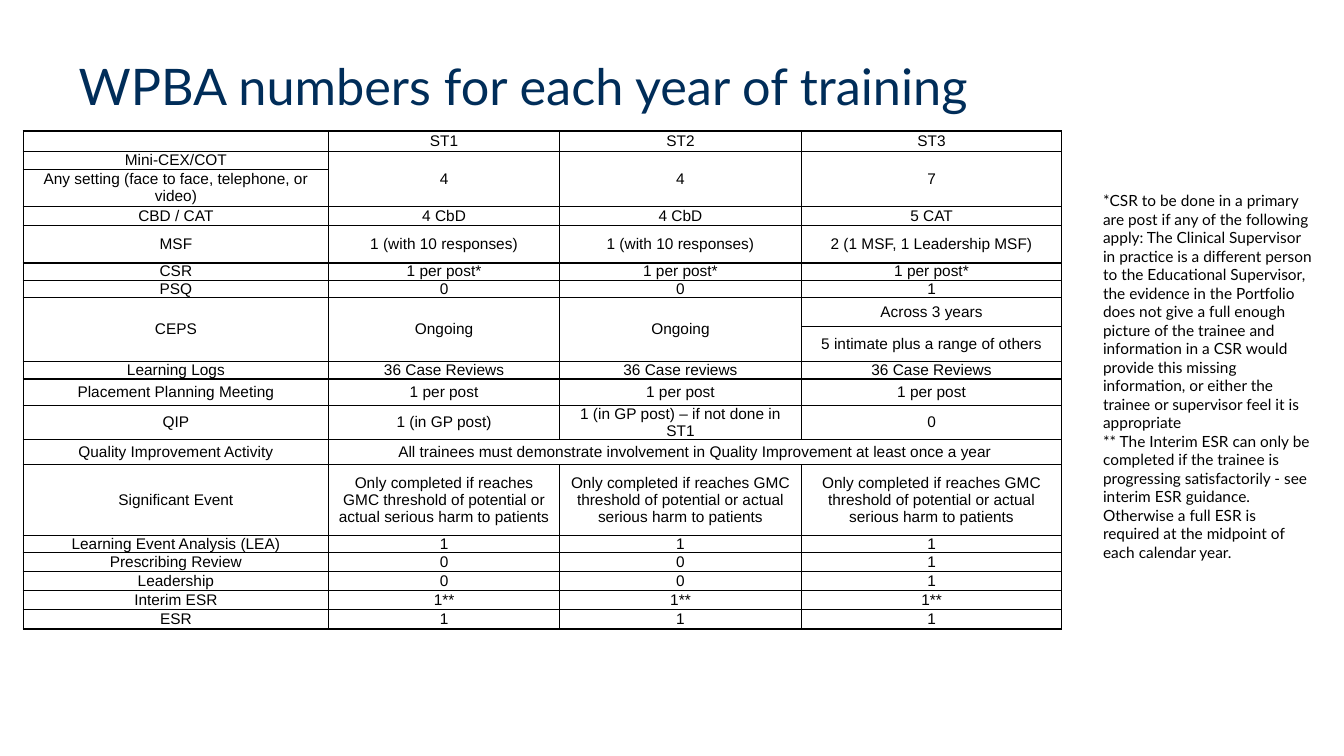
import pptx
import pptx.dml.color
import pptx.enum.text
import pptx.oxml
import pptx.oxml.ns
import pptx.util
from pptx.util import Inches

BLACK = "000000"
NAVY = "002D59"
HARM = "Only completed if reaches GMC threshold of potential or actual serious harm to patients"
COLUMNS = [3.03, 2.29, 2.4, 2.58]
ROWS = [
    (0.2, ["", "ST1", "ST2", "ST3"]),
    (0.18, ["Mini-CEX/COT", "4", "4", "7"]),
    (0.37, ["Any setting (face to face, telephone, or video)", "", "", ""]),
    (0.19, ["CBD / CAT", "4 CbD", "4 CbD", "5 CAT"]),
    (0.37, ["MSF", "1 (with 10 responses)", "1 (with 10 responses)", "2 (1 MSF, 1 Leadership MSF)"]),
    (0.17, ["CSR", "1 per post*", "1 per post*", "1 per post*"]),
    (0.17, ["PSQ", "0", "0", "1"]),
    (0.29, ["CEPS", "Ongoing", "Ongoing", "Across 3 years"]),
    (0.35, ["", "", "", "5 intimate plus a range of others"]),
    (0.17, ["Learning Logs", "36 Case Reviews", "36 Case reviews", "36 Case Reviews"]),
    (0.26, ["Placement Planning Meeting", "1 per post", "1 per post", "1 per post"]),
    (0.34, ["QIP", "1 (in GP post)", "1 (in GP post) – if not done in ST1", "0"]),
    (0.25, ["Quality Improvement Activity",
            "All trainees must demonstrate involvement in Quality Improvement at least once a year", "", ""]),
    (0.7, ["Significant Event", HARM, HARM, HARM]),
    (0.17, ["Learning Event Analysis (LEA)", "1", "1", "1"]),
    (0.19, ["Prescribing Review", "0", "0", "1"]),
    (0.19, ["Leadership", "0", "0", "1"]),
    (0.19, ["Interim ESR", "1**", "1**", "1**"]),
    (0.19, ["ESR", "1", "1", "1"]),
]
MERGES = [((1, c), (2, c)) for c in (1, 2, 3)] + [((7, c), (8, c)) for c in (0, 1, 2)] + [((12, 1), (12, 3))]
NOTES = [
    "*CSR to be done in a primary are post if any of the following apply: The Clinical Supervisor in practice "
    "is a different person to the Educational Supervisor, the evidence in the Portfolio does not give a full "
    "enough picture of the trainee and information in a CSR would provide this missing information, or either "
    "the trainee or supervisor feel it is appropriate",
    "** The Interim ESR can only be completed if the trainee is progressing satisfactorily - see interim ESR "
    "guidance. Otherwise a full ESR is required at the midpoint of each calendar year.",
]


def rgb(value):
    """Turn a hex string into a colour."""
    return pptx.dml.color.RGBColor.from_string(value)


def format_runs(tf, name, size, color):
    """Give every run of a text frame its font."""
    for p in tf.paragraphs:
        for r in p.runs:
            r.font.name = name
            r.font.size = pptx.util.Pt(size)
            r.font.color.rgb = rgb(color)


def set_frame(tf):
    """Set the margins and flow of a text box."""
    tf.margin_left = tf.margin_right = tf.margin_top = tf.margin_bottom = Inches(0.05)
    tf.word_wrap = True
    tf.auto_size = pptx.enum.text.MSO_AUTO_SIZE.NONE
    tf.vertical_anchor = pptx.enum.text.MSO_ANCHOR.TOP


def add_title(s, left, top, width, height):
    """Place the slide title in its box."""
    sp = s.shapes.title
    sp.left, sp.top, sp.width, sp.height = (Inches(v) for v in (left, top, width, height))
    tf = sp.text_frame
    tf.text = "WPBA numbers for each year of training"
    tf.paragraphs[0].alignment = pptx.enum.text.PP_ALIGN.LEFT
    set_frame(tf)
    format_runs(tf, "Lato", 36, NAVY)


def format_cell(cell, text):
    """Fill one table cell with centred text and thin borders."""
    cell.margin_left = cell.margin_right = Inches(0.07)
    cell.margin_top = cell.margin_bottom = 0
    cell.vertical_anchor = pptx.enum.text.MSO_ANCHOR.MIDDLE
    tf = cell.text_frame
    tf.text = text
    p = tf.paragraphs[0]
    p.alignment = pptx.enum.text.PP_ALIGN.CENTER
    format_runs(tf, "Arial", 11, BLACK)
    ns = pptx.oxml.ns.nsdecls("a")
    if not text:
        p._p.append(pptx.oxml.parse_xml(f'<a:endParaRPr {ns} sz="1100"><a:latin typeface="Arial"/></a:endParaRPr>'))
    tc_pr = cell._tc.get_or_add_tcPr()
    for side in ("lnL", "lnR", "lnT", "lnB"):
        tc_pr.append(pptx.oxml.parse_xml(
            f'<a:{side} {ns} w="12700"><a:solidFill><a:srgbClr val="{BLACK}"/></a:solidFill></a:{side}>'))
    cell.fill.background()


def add_assessments(s, left, top):
    """Place the table of assessments for each training year."""
    heights = [height for height, _ in ROWS]
    frame = s.shapes.add_table(len(ROWS), len(COLUMNS), Inches(left), Inches(top),
                               Inches(sum(COLUMNS)), Inches(sum(heights)))
    table = frame.table
    table.first_row = table.horz_banding = False
    for column, width in zip(table.columns, COLUMNS):
        column.width = Inches(width)
    for row, (height, texts) in zip(table.rows, ROWS):
        row.height = Inches(height)
        for cell, text in zip(row.cells, texts):
            format_cell(cell, text)
    for first, last in MERGES:
        table.cell(*first).merge(table.cell(*last))


def add_notes(s, left, top, width, height):
    """Place the footnotes beside the table."""
    sp = s.shapes.add_textbox(Inches(left), Inches(top), Inches(width), Inches(height))
    tf = sp.text_frame
    tf.text = "\n".join(NOTES)
    set_frame(tf)
    format_runs(tf, "Lato", 11, BLACK)


def main():
    """Build the slide and save it."""
    prs = pptx.Presentation()
    prs.slide_width, prs.slide_height = Inches(13.33), Inches(7.5)
    s = prs.slides.add_slide(prs.slide_layouts[5])
    add_assessments(s, 0.23, 1.3)
    add_title(s, 0.73, 0.5, 9.23, 0.71)
    add_notes(s, 10.89, 1.85, 2.22, 3.8)
    prs.save("out.pptx")


if __name__ == "__main__":
    main()
